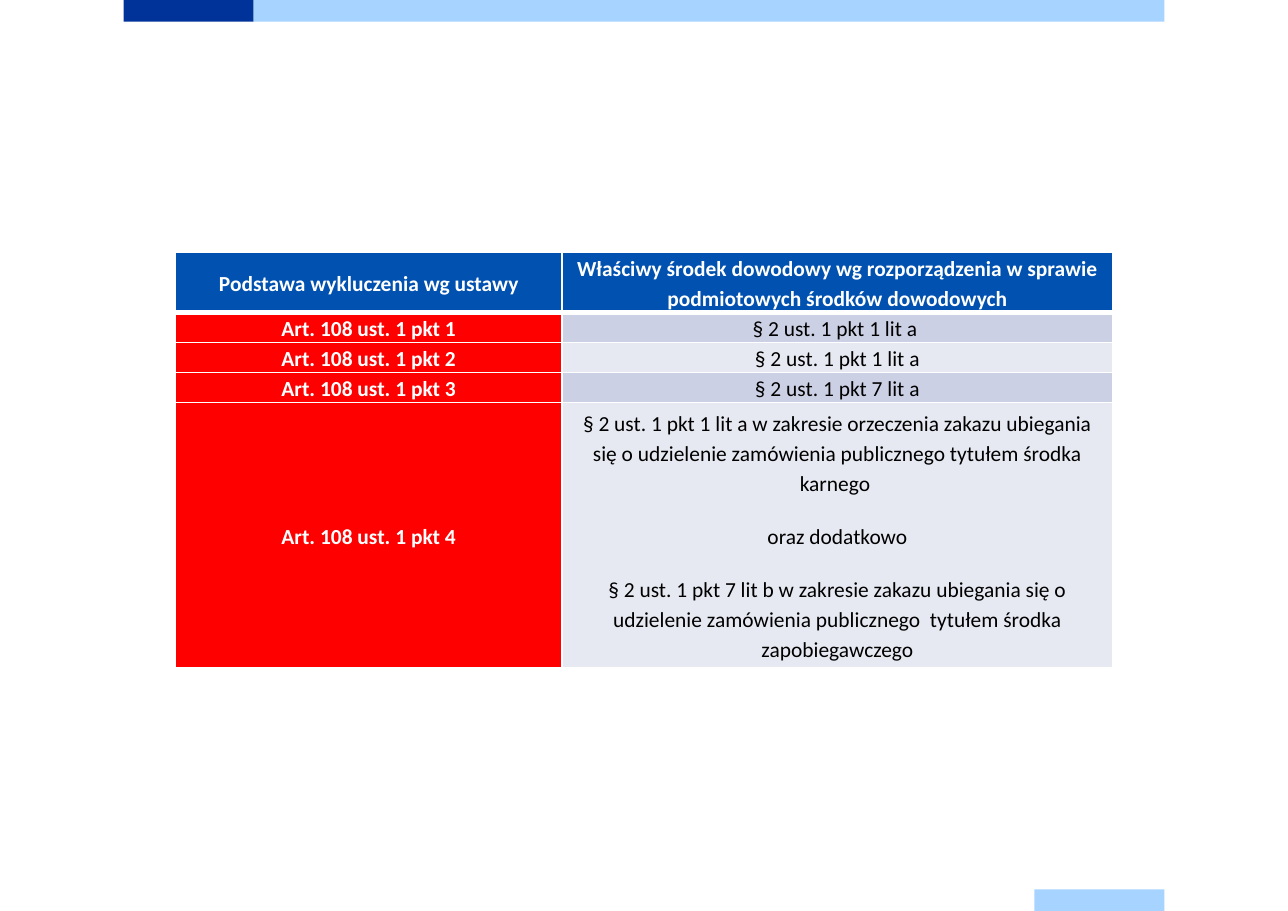
from lxml import etree
from pptx import Presentation
from pptx.dml.color import RGBColor
from pptx.enum.shapes import MSO_SHAPE
from pptx.enum.text import MSO_ANCHOR, PP_ALIGN
from pptx.oxml.ns import qn
from pptx.util import Cm, Pt

# Content
HEADINGS = (
    "Podstawa wykluczenia wg ustawy",
    "Właściwy środek dowodowy wg rozporządzenia w sprawie podmiotowych środków dowodowych",
)
EVIDENCE = [
    ("Art. 108 ust. 1 pkt 1", "§ 2 ust. 1 pkt 1 lit a "),
    ("Art. 108 ust. 1 pkt 2", "§ 2 ust. 1 pkt 1 lit a"),
    ("Art. 108 ust. 1 pkt 3", "§ 2 ust. 1 pkt 7 lit a"),
    ("Art. 108 ust. 1 pkt 4",
     "§ 2 ust. 1 pkt 1 lit a w zakresie orzeczenia zakazu ubiegania się o udzielenie "
     "zamówienia publicznego tytułem środka karnego \n"
     "oraz dodatkowo\n"
     "§ 2 ust. 1 pkt 7 lit b w zakresie zakazu ubiegania się o udzielenie "
     "zamówienia publicznego  tytułem środka zapobiegawczego"),
]

# Colours
WHITE = RGBColor(0xFF, 0xFF, 0xFF)
BLACK = RGBColor(0x00, 0x00, 0x00)
NAVY = RGBColor(0x00, 0x33, 0x99)
SKY = RGBColor(0xA6, 0xD3, 0xFF)
BLUE = RGBColor(0x00, 0x51, 0xB0)
RED = RGBColor(0xFF, 0x00, 0x00)
BANDS = (RGBColor(0xCC, 0xD0, 0xE4), RGBColor(0xE7, 0xE9, 0xF2))

# Measures in centimetres
SLIDE_W, SLIDE_H = 29.7, 21
BAR_LEFT, BAR_RIGHT, BAR_H, SHORT_BAR = 2.85, 26.85, 0.5, 3
TABLE_LEFT, TABLE_TOP = 4.05, 5.82
COLUMN_WIDTHS = (8.91, 12.7)
ROW_HEIGHTS = (1.3, 0.64, 0.64, 0.64, 6.1)


def add_bar(slide, left, top, width, colour):
    bar = slide.shapes.add_shape(
        MSO_SHAPE.RECTANGLE, Cm(left), Cm(top), Cm(width), Cm(BAR_H))
    bar.shadow.inherit = False
    bar.fill.solid()
    bar.fill.fore_color.rgb = colour
    bar.line.fill.background()


def add_borders(cell, top, bottom):
    """Draw white borders; the side borders are always 1 pt."""
    properties = cell._tc.get_or_add_tcPr()
    widths = {"a:lnL": 1, "a:lnR": 1, "a:lnT": top, "a:lnB": bottom}
    for place, (side, width) in enumerate(widths.items()):
        border = etree.Element(qn(side), w=str(Pt(width)))
        fill = etree.SubElement(border, qn("a:solidFill"))
        etree.SubElement(fill, qn("a:srgbClr"), val=str(WHITE))
        properties.insert(place, border)


def fill_cell(cell, text, background, colour, bold):
    cell.fill.solid()
    cell.fill.fore_color.rgb = background
    cell.vertical_anchor = MSO_ANCHOR.MIDDLE
    cell.margin_left = cell.margin_right = Cm(0.25)
    cell.margin_top = cell.margin_bottom = 0
    cell.text_frame.text = text
    for number, paragraph in enumerate(cell.text_frame.paragraphs):
        paragraph.alignment = PP_ALIGN.CENTER
        paragraph.line_spacing = 1.15
        paragraph.space_before = Pt(5 if number else 0)
        paragraph.space_after = Pt(10)
        paragraph.font.name = "Calibri"
        paragraph.font.size = Pt(14)
        paragraph.font.bold = bold
        paragraph.font.color.rgb = colour


def main():
    prs = Presentation()
    prs.slide_width, prs.slide_height = Cm(SLIDE_W), Cm(SLIDE_H)
    slide = prs.slides.add_slide(prs.slide_layouts[6])

    # Edge bars
    sky_left = BAR_LEFT + SHORT_BAR
    add_bar(slide, BAR_LEFT, 0, SHORT_BAR, NAVY)
    add_bar(slide, sky_left, 0, BAR_RIGHT - sky_left, SKY)
    add_bar(slide, BAR_RIGHT - SHORT_BAR, SLIDE_H - BAR_H, SHORT_BAR, SKY)

    # Evidence table
    rows = [HEADINGS, *EVIDENCE]
    table = slide.shapes.add_table(
        len(rows), len(HEADINGS), Cm(TABLE_LEFT), Cm(TABLE_TOP),
        Cm(sum(COLUMN_WIDTHS)), Cm(sum(ROW_HEIGHTS))).table
    for column, width in zip(table.columns, COLUMN_WIDTHS):
        column.width = Cm(width)
    for row, height in zip(table.rows, ROW_HEIGHTS):
        row.height = Cm(height)

    for r, texts in enumerate(rows):
        for c, text in enumerate(texts):
            cell = table.cell(r, c)
            is_heading = r == 0
            is_label = is_heading or c == 0
            if is_heading:
                background = BLUE
            else:
                background = RED if is_label else BANDS[(r - 1) % 2]
            fill_cell(cell, text, background, WHITE if is_label else BLACK, is_label)
            add_borders(cell, top=3 if r == 1 else 1, bottom=3 if is_heading else 1)

    prs.save("out.pptx")


if __name__ == "__main__":
    main()
